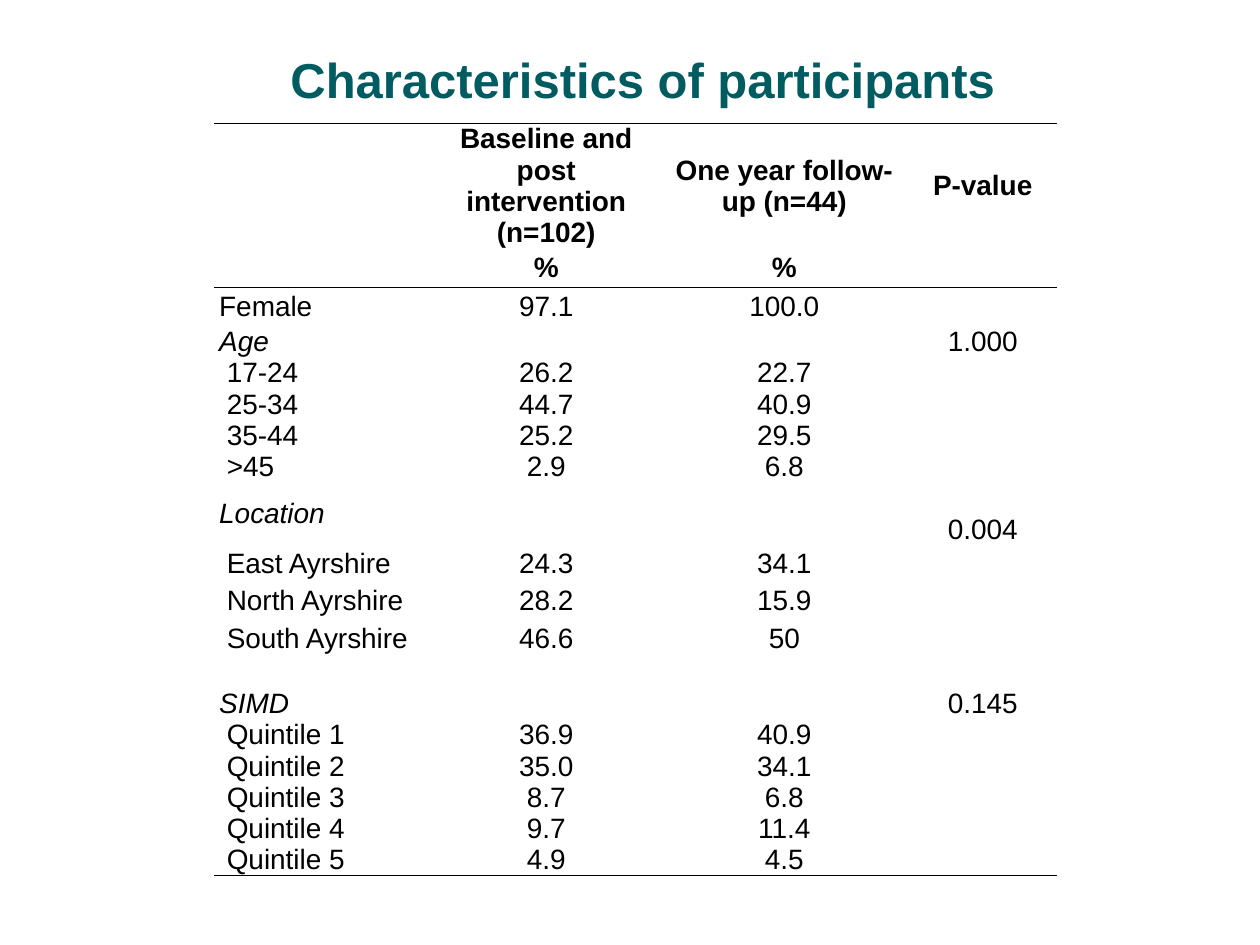
from dataclasses import dataclass

from lxml.etree import SubElement
from pptx import Presentation
from pptx.dml.color import RGBColor
from pptx.enum.text import MSO_ANCHOR as ANCHOR, PP_ALIGN as ALIGN
from pptx.oxml import parse_xml
from pptx.oxml.ns import nsdecls, qn
from pptx.util import Inches, Pt

COLORS = {"text": "000000", "title": "005C61"}
FONT = "Arial"
SIZE = Pt(16)
LINE = Pt(17.85)  # height of one line of table text
PLAIN_STYLE = "{2D5ABB26-0587-4C30-8999-92F81FD0307C}"
COLUMN_INCHES = (1.73, 1.81, 1.97, 1.18)
SIDES = ("lnL", "lnR", "lnT", "lnB")


@dataclass(frozen=True)
class Row:
    texts: tuple[str, str, str, str]
    lines: float = 1
    kind: str = "item"  # header, plain, group or item
    anchors: tuple[str, str] = ("middle", "middle")  # label, p-value
    rules: tuple[str, ...] = ()


ROWS = (
    Row(("", "Baseline and post intervention (n=102)",
         "One year follow-up (n=44)", "P-value"), 4, "header", rules=("lnT",)),
    Row(("", "%", "%", ""), 1.25, "header", rules=("lnB",)),
    Row(("Female", "97.1", "100.0", ""), 1.25, "plain", rules=("lnT",)),
    Row(("Age", "", "", "1.000"), kind="group"),
    Row(("17-24", "26.2", "22.7", "")),
    Row(("25-34", "44.7", "40.9", "")),
    Row(("35-44", "25.2", "29.5", "")),
    Row((">45", "2.9", "6.8", "")),
    Row(("Location", "", "", "0.004"), 2, "group", ("middle", "bottom")),
    Row(("East Ayrshire", "24.3", "34.1", ""), 1.2),
    Row(("North Ayrshire", "28.2", "15.9", ""), 1.2),
    Row(("South Ayrshire", "46.6", "50", ""), 1.2),
    Row(("SIMD", "", "", "0.145"), 2, "group", ("bottom", "bottom")),
    Row(("Quintile 1", "36.9", "40.9", "")),
    Row(("Quintile 2", "35.0", "34.1", "")),
    Row(("Quintile 3", "8.7", "6.8", "")),
    Row(("Quintile 4", "9.7", "11.4", "")),
    Row(("Quintile 5", "4.9", "4.5", ""), rules=("lnB",)),
)


def style_run(r, size: int, color: str, bold=False, italic=False) -> None:
    r.font.name = FONT
    r.font.size = size
    r.font.bold = bold
    r.font.italic = italic
    r.font.color.rgb = RGBColor.from_string(COLORS[color])


def set_borders(cell, ruled: tuple[str, ...]) -> None:
    """Draw 1 pt lines on the ruled sides and clear the others."""
    line = f'<a:solidFill><a:srgbClr val="{COLORS["text"]}"/></a:solidFill>'
    for i, side in enumerate(SIDES):
        fill = line if side in ruled else "<a:noFill/>"
        cell._tc.get_or_add_tcPr().insert(i, parse_xml(
            f'<a:{side} {nsdecls("a")} w="{Pt(1)}">{fill}</a:{side}>'))


def fill_cell(cell, row: Row, col: int) -> None:
    cell.fill.background()
    indented = col == 0 and row.kind == "item"
    cell.margin_left = Inches(0.1 if indented else 0.04)
    cell.margin_right = Inches(0.04)
    cell.margin_top = cell.margin_bottom = 0
    anchor = {0: row.anchors[0], 3: row.anchors[1]}.get(col, "middle")
    cell.vertical_anchor = ANCHOR.BOTTOM if anchor == "bottom" else ANCHOR.MIDDLE
    cell.text_frame.text = row.texts[col]
    p = cell.text_frame.paragraphs[0]
    p.alignment = ALIGN.CENTER if col else ALIGN.LEFT
    for r in p.runs:
        style_run(r, SIZE, "text", row.kind == "header",
                  col == 0 and row.kind == "group")
    if not p.runs:  # keeps empty cells from stretching their row
        end = SubElement(p._p, qn("a:endParaRPr"), sz=str(int(SIZE.pt * 100)))
        SubElement(end, qn("a:latin"), typeface=FONT)
    set_borders(cell, row.rules)


def add_participant_table(slide) -> None:
    heights = [int(row.lines * LINE) for row in ROWS]
    frame = slide.shapes.add_table(
        len(ROWS), len(COLUMN_INCHES), Inches(1.7), Inches(0.98),
        Inches(sum(COLUMN_INCHES)), sum(heights))
    table = frame.table
    table.first_row = table.horz_banding = False
    table._tbl.tblPr.find(qn("a:tableStyleId")).text = PLAIN_STYLE
    for column, width in zip(table.columns, COLUMN_INCHES):
        column.width = Inches(width)
    for i, (row, height) in enumerate(zip(ROWS, heights)):
        table.rows[i].height = height
        for col in range(len(COLUMN_INCHES)):
            fill_cell(table.cell(i, col), row, col)


def add_title(slide, text: str) -> None:
    box = slide.shapes.add_textbox(
        Inches(2.17), Inches(0.34), Inches(5.86), Inches(0.57))
    tf = box.text_frame
    tf.word_wrap = False
    tf.text = text
    p = tf.paragraphs[0]
    p.alignment = ALIGN.CENTER
    style_run(p.runs[0], Pt(28), "title", bold=True)


def main() -> None:
    prs = Presentation()
    prs.slide_width, prs.slide_height = Inches(10), Inches(7.5)
    slide = prs.slides.add_slide(prs.slide_layouts[6])
    add_participant_table(slide)
    add_title(slide, "Characteristics of participants")
    prs.save("out.pptx")


if __name__ == "__main__":
    main()
